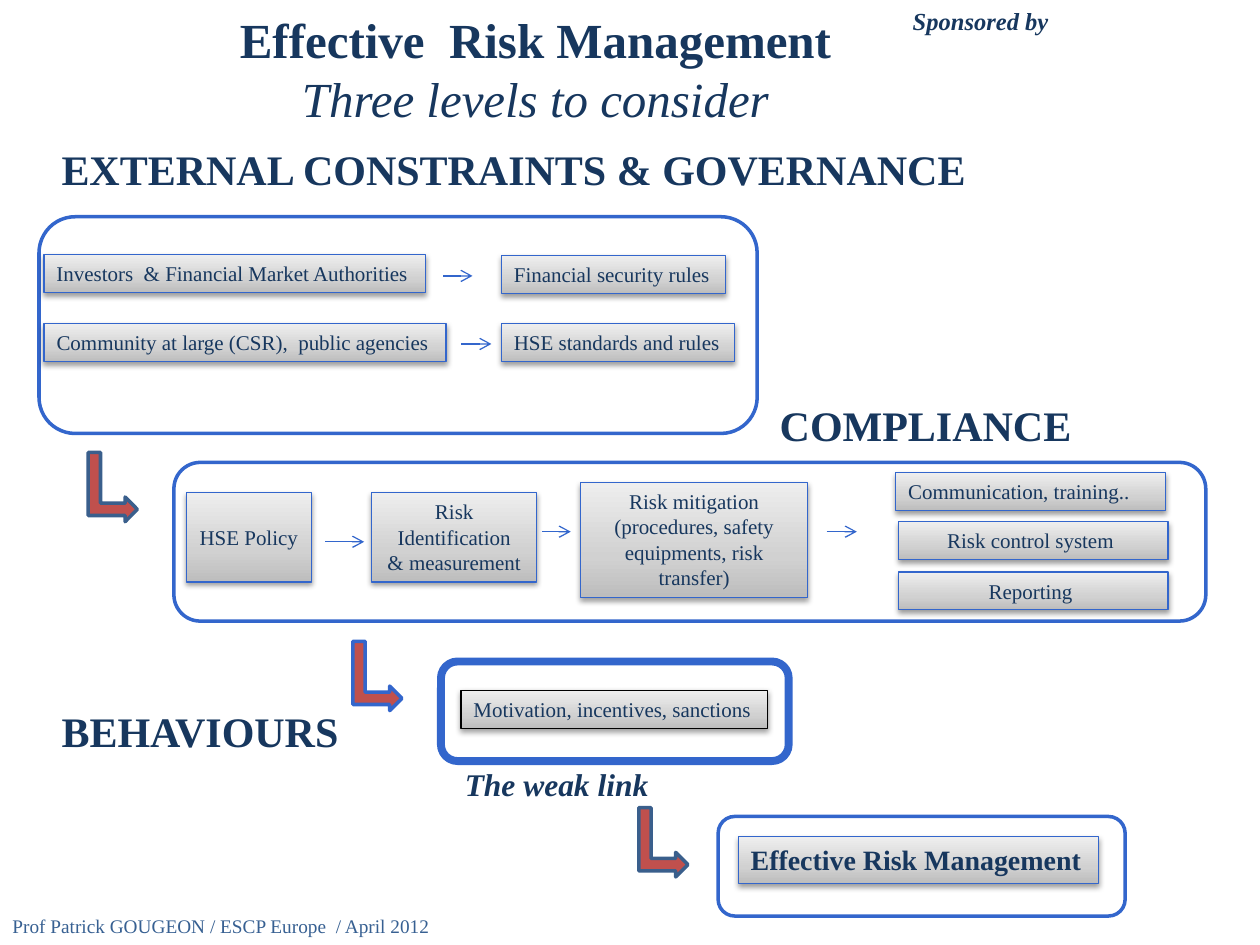
from pptx import Presentation
from pptx.dml.color import RGBColor
from pptx.enum.shapes import MSO_CONNECTOR as Link, MSO_SHAPE as Shape
from pptx.enum.text import MSO_ANCHOR as Anchor, MSO_AUTO_SIZE as Fit, PP_ALIGN as Align
from pptx.oxml import parse_xml
from pptx.oxml.ns import nsdecls
from pptx.util import Inches, Pt

NAVY, BLUE, STEEL, RED = "17375E", "3366CC", "3A5F8C", "C0504D"
NS = nsdecls("a")
GRADIENT = (f'<a:gradFill {NS} rotWithShape="1"><a:gsLst>'
            '<a:gs pos="0"><a:srgbClr val="BDBDBD"/></a:gs>'
            '<a:gs pos="35000"><a:srgbClr val="D1D1D1"/></a:gs>'
            '<a:gs pos="100000"><a:srgbClr val="EEEEEE"/></a:gs>'
            '</a:gsLst><a:lin ang="16200000" scaled="1"/></a:gradFill>')
SHADOW = (f'<a:effectLst {NS}><a:outerShdw blurRad="40000" dist="20000" dir="5400000" '
          'rotWithShape="0"><a:srgbClr val="000000"><a:alpha val="38000"/></a:srgbClr>'
          '</a:outerShdw></a:effectLst>')


def color(value):
    return RGBColor.from_string(value)


def write(box, text, size, bold=False, italic=False, align=Align.LEFT, wrap=False,
          fit=Fit.SHAPE_TO_FIT_TEXT, anchor=Anchor.TOP, ink=NAVY):
    frame = box.text_frame
    frame.text = text
    frame.word_wrap = wrap
    frame.auto_size = fit
    frame.vertical_anchor = anchor
    for para in frame.paragraphs:
        para.alignment = align
        for span in para.runs:
            span.font.name = "Times New Roman"
            span.font.size = Pt(size)
            span.font.bold = bold
            span.font.italic = italic
            span.font.color.rgb = color(ink)


deck = Presentation()
deck.slide_width, deck.slide_height = Inches(10), Inches(7.5)
page = deck.slides.add_slide(deck.slide_layouts[6])

title = page.shapes.add_textbox(Inches(1.22), Inches(0), Inches(6.06), Inches(1.09))
write(title, "Effective  Risk Management\vThree levels to consider", 28, bold=True,
      align=Align.CENTER, wrap=True, fit=Fit.NONE, anchor=Anchor.MIDDLE)
subtitle = title.text_frame.paragraphs[0].runs[1]
subtitle.font.bold, subtitle.font.italic = False, True

labels = [
    ("Prof Patrick GOUGEON / ESCP Europe  / April 2012", 0, 7.21, 3.55, 0.29, 11,
     dict(ink="376092")),
    ("Sponsored by", 7.13, 0, 1.29, 0.34, 14, dict(bold=True, italic=True, align=Align.RIGHT)),
    ("EXTERNAL CONSTRAINTS & GOVERNANCE", 0.39, 1.09, 7.46, 0.5, 24, dict(bold=True)),
    ("COMPLIANCE", 6.09, 3.12, 2.54, 0.5, 24, dict(bold=True)),
    ("BEHAVIOURS", 0.39, 5.55, 2.42, 0.5, 24, dict(bold=True)),
    ("The weak link", 3.59, 6.02, 1.68, 0.4, 18, dict(bold=True, italic=True)),
]
for text, left, top, width, height, size, style in labels:
    label = page.shapes.add_textbox(Inches(left), Inches(top), Inches(width), Inches(height))
    write(label, text, size, **style)

frames = [
    (0.31, 1.72, 5.7, 1.72, 2),
    (1.38, 3.67, 8.19, 1.26, 2),
    (3.5, 5.25, 2.76, 0.79, 4.5),
    (5.7, 6.48, 3.23, 0.79, 2),
]
for left, top, width, height, weight in frames:
    level = page.shapes.add_shape(Shape.ROUNDED_RECTANGLE, Inches(left), Inches(top),
                                  Inches(width), Inches(height))
    level.shadow.inherit = False
    level.fill.background()
    level.line.color.rgb = color(BLUE)
    level.line.width = Pt(weight)

centred = dict(align=Align.CENTER)
wrapped = dict(align=Align.CENTER, wrap=True)
boxes = [
    ("Investors  & Financial Market Authorities", 0.35, 2.02, 3.03, 0.3, 12, BLUE, {}),
    ("Financial security rules", 3.98, 2.03, 1.78, 0.3, 12, BLUE, {}),
    ("Community at large (CSR),  public agencies", 0.35, 2.57, 3.19, 0.3, 12, BLUE, {}),
    ("HSE standards and rules", 3.98, 2.57, 1.85, 0.3, 12, BLUE, {}),
    ("HSE Policy", 1.48, 3.91, 0.99, 0.71, 12, BLUE,
     dict(align=Align.CENTER, fit=Fit.NONE, anchor=Anchor.MIDDLE)),
    ("Risk\nIdentification\n& measurement", 2.95, 3.91, 1.31, 0.71, 12, BLUE, centred),
    ("Risk mitigation\n(procedures, safety equipments, risk transfer)",
     4.61, 3.83, 1.8, 0.91, 12, BLUE, wrapped),
    ("Communication, training..", 7.11, 3.75, 2.14, 0.3, 12, BLUE, dict(wrap=True)),
    ("Risk control system ", 7.13, 4.14, 2.14, 0.3, 12, BLUE, wrapped),
    ("Reporting ", 7.13, 4.54, 2.14, 0.3, 12, BLUE, wrapped),
    ("Motivation, incentives, sanctions", 3.66, 5.48, 2.43, 0.3, 12, "000000", {}),
    ("Effective Risk Management", 5.86, 6.64, 2.86, 0.37, 16, BLUE, dict(bold=True)),
]
for text, left, top, width, height, size, edge, style in boxes:
    box = page.shapes.add_shape(Shape.RECTANGLE, Inches(left), Inches(top),
                                Inches(width), Inches(height))
    box.line.color.rgb = color(edge)
    box.line.width = Pt(0.75)
    properties = box.element.spPr
    properties.insert(2, parse_xml(GRADIENT))
    properties.append(parse_xml(SHADOW))
    write(box, text, size, **style)

arrows = [(3.52, 3.75, 2.19), (3.66, 3.9, 2.73), (2.58, 2.89, 4.3),
          (4.3, 4.53, 4.22), (6.56, 6.8, 4.22)]
for start, end, height in arrows:
    arrow = page.shapes.add_connector(Link.STRAIGHT, Inches(start), Inches(height),
                                      Inches(end), Inches(height))
    arrow.line.color.rgb = color(BLUE)
    arrow.line.width = Pt(0.75)
    arrow.line._get_or_add_ln().append(parse_xml(f'<a:tailEnd {NS} type="arrow"/>'))
    arrow.element.spPr.append(parse_xml(f'<a:effectLst {NS}/>'))

for left, top, edge in [(0.62, 3.67, STEEL), (2.72, 5.17, BLUE), (4.99, 6.49, STEEL)]:
    step = page.shapes.add_shape(Shape.BENT_UP_ARROW, Inches(left), Inches(top),
                                 Inches(0.55), Inches(0.39))
    step.rotation = 90
    step.shadow.inherit = False
    step.fill.solid()
    step.fill.fore_color.rgb = color(RED)
    step.line.color.rgb = color(edge)
    step.line.width = Pt(2)

deck.save("out.pptx")
